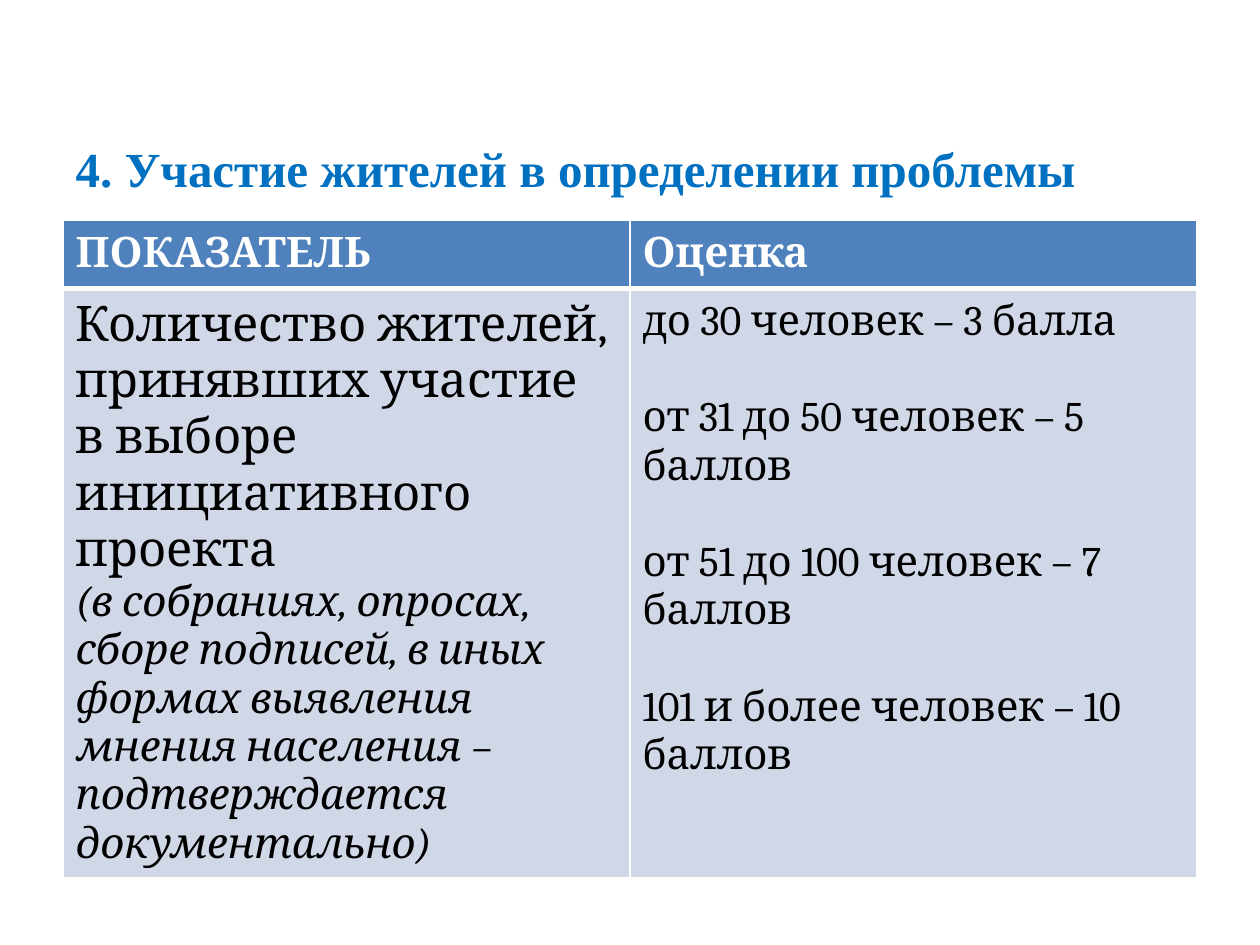
"""Build a slide with a scoring table on residents' participation."""
from pptx import Presentation
from pptx.dml.color import RGBColor
from pptx.enum.text import MSO_ANCHOR, PP_ALIGN
from pptx.oxml import parse_xml
from pptx.oxml.ns import nsdecls
from pptx.util import Inches, Pt

TOP = MSO_ANCHOR.TOP
LEFT = PP_ALIGN.LEFT
TITLE_BLUE = RGBColor(0x00, 0x70, 0xC0)
HEADER_BLUE = RGBColor(0x4F, 0x81, 0xBD)
BODY_BLUE = RGBColor(0xD0, 0xD8, 0xE8)
WHITE = RGBColor(0xFF, 0xFF, 0xFF)
BLACK = RGBColor(0x00, 0x00, 0x00)

TITLE = {"name": "Times New Roman", "size": Pt(28), "bold": True}
HEADER = {"name": "Cambria", "size": Pt(24), "bold": True, "italic": False}
SCORE = {**HEADER, "bold": False}
INDICATOR = {**SCORE, "size": Pt(28)}
REMARK = {**SCORE, "italic": True}
SCORE_GAP = Pt(27.6)

HEADINGS = ["ПОКАЗАТЕЛЬ", "Оценка"]
INDICATOR_TEXTS = [
    ("Количество жителей, принявших участие в выборе инициативного проекта", INDICATOR),
    ("(в собраниях, опросах, сборе подписей, в иных формах выявления мнения "
     "населения – подтверждается документально)", REMARK),
]
SCORE_TEXTS = [
    ("до 30 человек – 3 балла", SCORE),
    ("от 31 до 50 человек – 5 баллов", SCORE),
    ("от 51 до 100 человек – 7 баллов", SCORE),
    ("101 и более человек – 10 баллов", SCORE),
]


def format_font(font, values, color):
    """Apply font values and a colour."""
    for name, value in values.items():
        setattr(font, name, value)
    font.color.rgb = color


def add_title(slide, text):
    """Place and format the title placeholder."""
    title = slide.shapes.title
    box = {"left": 0.5, "top": 1, "width": 9, "height": 1}
    for name, value in box.items():
        setattr(title, name, Inches(value))
    frame = title.text_frame
    frame.vertical_anchor = TOP
    frame.margin_top = Inches(0.1)
    paragraph = frame.paragraphs[0]
    paragraph.alignment = LEFT
    run = paragraph.add_run()
    run.text = text
    format_font(run.font, TITLE, TITLE_BLUE)


def set_borders(cell, widths):
    """Draw white borders with the given widths in points."""
    properties = cell._tc.get_or_add_tcPr()
    for index, (side, width) in enumerate(widths.items()):
        properties.insert(index, parse_xml(
            f'<a:ln{side} {nsdecls("a")} w="{Pt(width)}"><a:solidFill>'
            f'<a:srgbClr val="{WHITE}"/></a:solidFill></a:ln{side}>'))


def fill_cell(cell, texts, fill, color, borders, gap=Pt(0)):
    """Write formatted paragraphs into a cell and colour it."""
    margins = {"margin_left": 0.1, "margin_right": 0.1,
               "margin_top": 0.07, "margin_bottom": 0.07}
    for name, value in margins.items():
        setattr(cell, name, Inches(value))
    cell.fill.solid()
    cell.fill.fore_color.rgb = fill
    set_borders(cell, borders)
    frame = cell.text_frame
    for index, (text, values) in enumerate(texts):
        paragraph = frame.add_paragraph() if index else frame.paragraphs[0]
        if index:
            paragraph.space_before = gap
        run = paragraph.add_run()
        run.text = text
        format_font(run.font, values, color)


def add_score_table(slide):
    """Add the table of indicator and scores."""
    table = slide.shapes.add_table(
        2, 2, Inches(0.5), Inches(1.75), Inches(9), Inches(4.94)).table
    for row, height in zip(table.rows, (0.54, 4.4)):
        row.height = Inches(height)
    header_borders = {"L": 1, "R": 1, "T": 1, "B": 3}
    body_borders = {"L": 1, "R": 1, "T": 3, "B": 1}
    for column, heading in enumerate(HEADINGS):
        fill_cell(table.cell(0, column), [(heading, HEADER)],
                  HEADER_BLUE, WHITE, header_borders)
    fill_cell(table.cell(1, 0), INDICATOR_TEXTS, BODY_BLUE, BLACK, body_borders)
    fill_cell(table.cell(1, 1), SCORE_TEXTS, BODY_BLUE, BLACK, body_borders, SCORE_GAP)


def main():
    """Create and save the presentation."""
    presentation = Presentation()
    presentation.slide_width = Inches(10)
    presentation.slide_height = Inches(7.5)
    slide = presentation.slides.add_slide(presentation.slide_layouts[5])
    add_title(slide, "4. Участие жителей в определении проблемы")
    add_score_table(slide)
    presentation.save("out.pptx")


if __name__ == "__main__":
    main()
